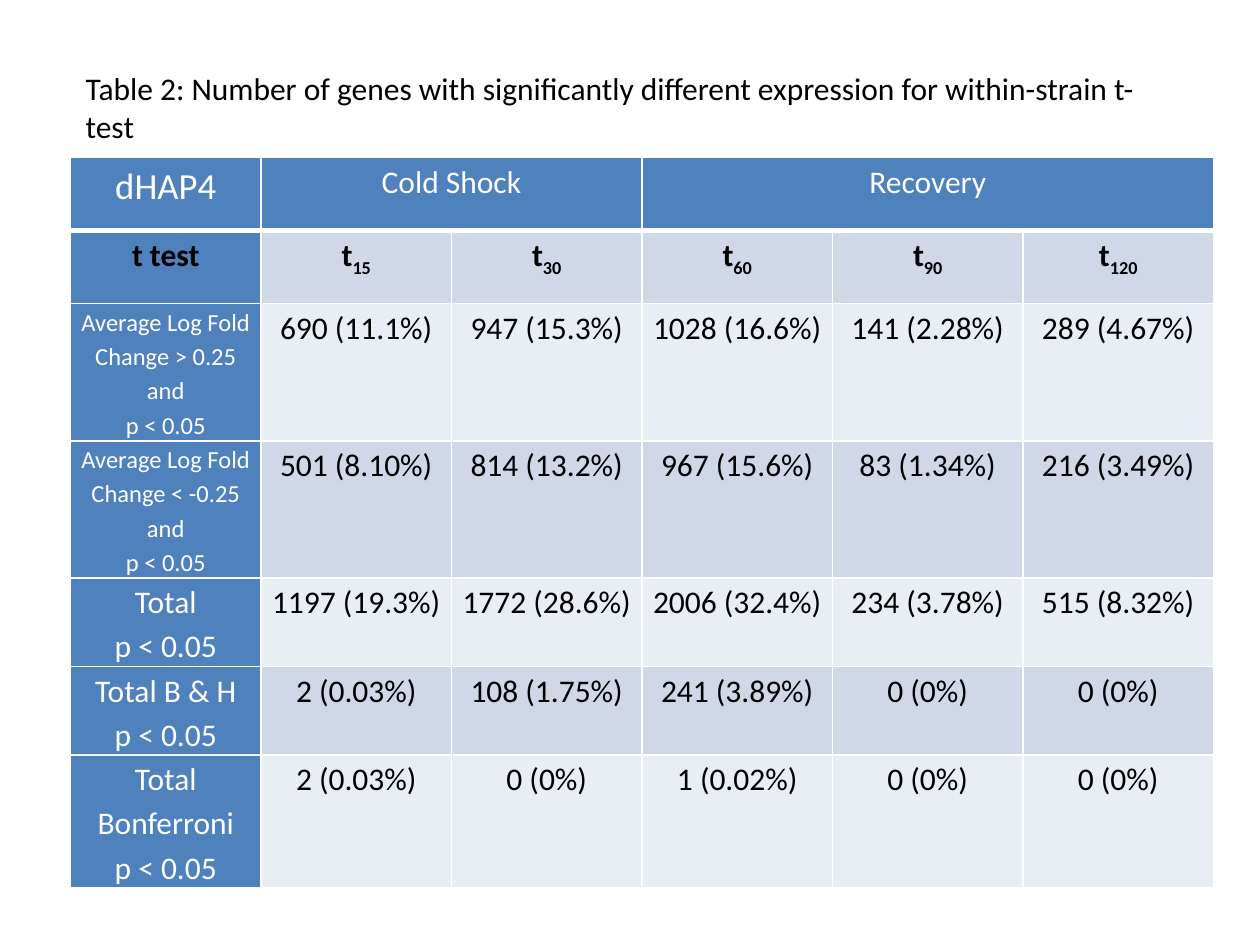
from dataclasses import dataclass

from lxml.etree import SubElement
from pptx import Presentation
from pptx.dml.color import RGBColor
from pptx.enum.text import MSO_ANCHOR, MSO_AUTO_SIZE, PP_ALIGN
from pptx.oxml.ns import qn
from pptx.util import Inches, Pt

FONT = "Calibri"
WHITE = RGBColor(0xFF, 0xFF, 0xFF)
BLACK = RGBColor(0x00, 0x00, 0x00)
BLUE = RGBColor(0x4F, 0x81, 0xBD)
BANDS = (RGBColor(0xD0, 0xD8, 0xE8), RGBColor(0xE9, 0xED, 0xF4))

LEFT, TOP, COL_W, ROW_H = 0.56, 1.25, 1.512, 0.58
TABLE_H = 5.73


@dataclass
class Group:
    label: str
    times: tuple[int, ...]


@dataclass
class Result:
    label: str
    counts: tuple[str, ...]
    label_size: int = 18


GROUPS = (Group("Cold Shock", (15, 30)), Group("Recovery", (60, 90, 120)))
TIMES = [t for group in GROUPS for t in group.times]

RESULTS = (
    Result("Average Log Fold Change > 0.25 and\np < 0.05",
           ("690 (11.1%)", "947 (15.3%)", "1028 (16.6%)", "141 (2.28%)", "289 (4.67%)"), 14),
    Result("Average Log Fold Change < -0.25 and\np < 0.05",
           ("501 (8.10%)", "814 (13.2%)", "967 (15.6%)", "83 (1.34%)", "216 (3.49%)"), 14),
    Result("Total\np < 0.05",
           ("1197 (19.3%)", "1772 (28.6%)", "2006 (32.4%)", "234 (3.78%)", "515 (8.32%)")),
    Result("Total B & H\np < 0.05",
           ("2 (0.03%)", "108 (1.75%)", "241 (3.89%)", "0 (0%)", "0 (0%)")),
    Result("Total Bonferroni\np < 0.05",
           ("2 (0.03%)", "0 (0%)", "1 (0.02%)", "0 (0%)", "0 (0%)")),
)


def set_borders(cell, bottom: float) -> None:
    """Draw white lines on all four sides of a cell."""
    tc_pr = cell._tc.get_or_add_tcPr()
    for side, width in (("L", 1), ("R", 1), ("T", 1), ("B", bottom)):
        line = SubElement(tc_pr, qn(f"a:ln{side}"), w=str(Pt(width)))
        fill = SubElement(line, qn("a:solidFill"))
        SubElement(fill, qn("a:srgbClr"), val=str(WHITE))


def write_cell(cell, text: str, fill: RGBColor, color: RGBColor, size: int = 18,
               bold: bool = False, subscript: str = "", bottom: float = 1) -> None:
    set_borders(cell, bottom)
    cell.fill.solid()
    cell.fill.fore_color.rgb = fill
    cell.margin_left = cell.margin_right = Inches(0.07)
    cell.margin_top = cell.margin_bottom = 0
    tf = cell.text_frame
    tf.text = text
    if subscript:
        r = tf.paragraphs[0].add_run()
        r.text = subscript
        r.font._element.set("baseline", "-25000")
    for p in tf.paragraphs:
        p.alignment = PP_ALIGN.CENTER
        p.line_spacing = 1.15
        for r in p.runs:
            font = r.font
            font.name, font.size, font.bold = FONT, Pt(size), bold
            font.color.rgb = color


def add_caption(slide, text: str) -> None:
    title = slide.shapes.title
    title.left, title.top = Inches(0.58), Inches(0.5)
    title.width, title.height = Inches(8.75), Inches(0.71)
    tf = title.text_frame
    tf.text = text
    tf.word_wrap = True
    tf.auto_size = MSO_AUTO_SIZE.NONE
    tf.vertical_anchor = MSO_ANCHOR.TOP
    p = tf.paragraphs[0]
    p.alignment = PP_ALIGN.LEFT
    p.font.name, p.font.size = FONT, Pt(18)
    p.font.color.rgb = BLACK


def add_results_table(slide) -> None:
    n_rows, n_cols = len(RESULTS) + 2, len(TIMES) + 1
    frame = slide.shapes.add_table(n_rows, n_cols, Inches(LEFT), Inches(TOP),
                                   Inches(COL_W * n_cols), Inches(ROW_H * n_rows))
    table = frame.table
    for row in table.rows:
        row.height = Inches(ROW_H)
    frame.height = Inches(TABLE_H)

    # Strain and treatment header
    write_cell(table.cell(0, 0), "dHAP4", BLUE, WHITE, size=21, bottom=3)
    col = 1
    for group in GROUPS:
        last = col + len(group.times) - 1
        table.cell(0, col).merge(table.cell(0, last))
        write_cell(table.cell(0, col), group.label, BLUE, WHITE, bottom=3)
        col = last + 1

    # Time points
    write_cell(table.cell(1, 0), "t test", BLUE, BLACK, bold=True)
    for col, time in enumerate(TIMES, 1):
        write_cell(table.cell(1, col), "t", BANDS[0], BLACK, bold=True, subscript=str(time))

    # Gene counts, in alternating bands
    for row, result in enumerate(RESULTS, 2):
        write_cell(table.cell(row, 0), result.label, BLUE, WHITE, size=result.label_size)
        for col, count in enumerate(result.counts, 1):
            write_cell(table.cell(row, col), count, BANDS[(row - 1) % 2], BLACK)


def main() -> None:
    prs = Presentation()
    prs.slide_width, prs.slide_height = Inches(10), Inches(7.5)
    slide = prs.slides.add_slide(prs.slide_layouts[5])
    add_caption(slide, "Table 2: Number of genes with significantly different "
                       "expression for within-strain t-test")
    add_results_table(slide)
    prs.save("out.pptx")


if __name__ == "__main__":
    main()
